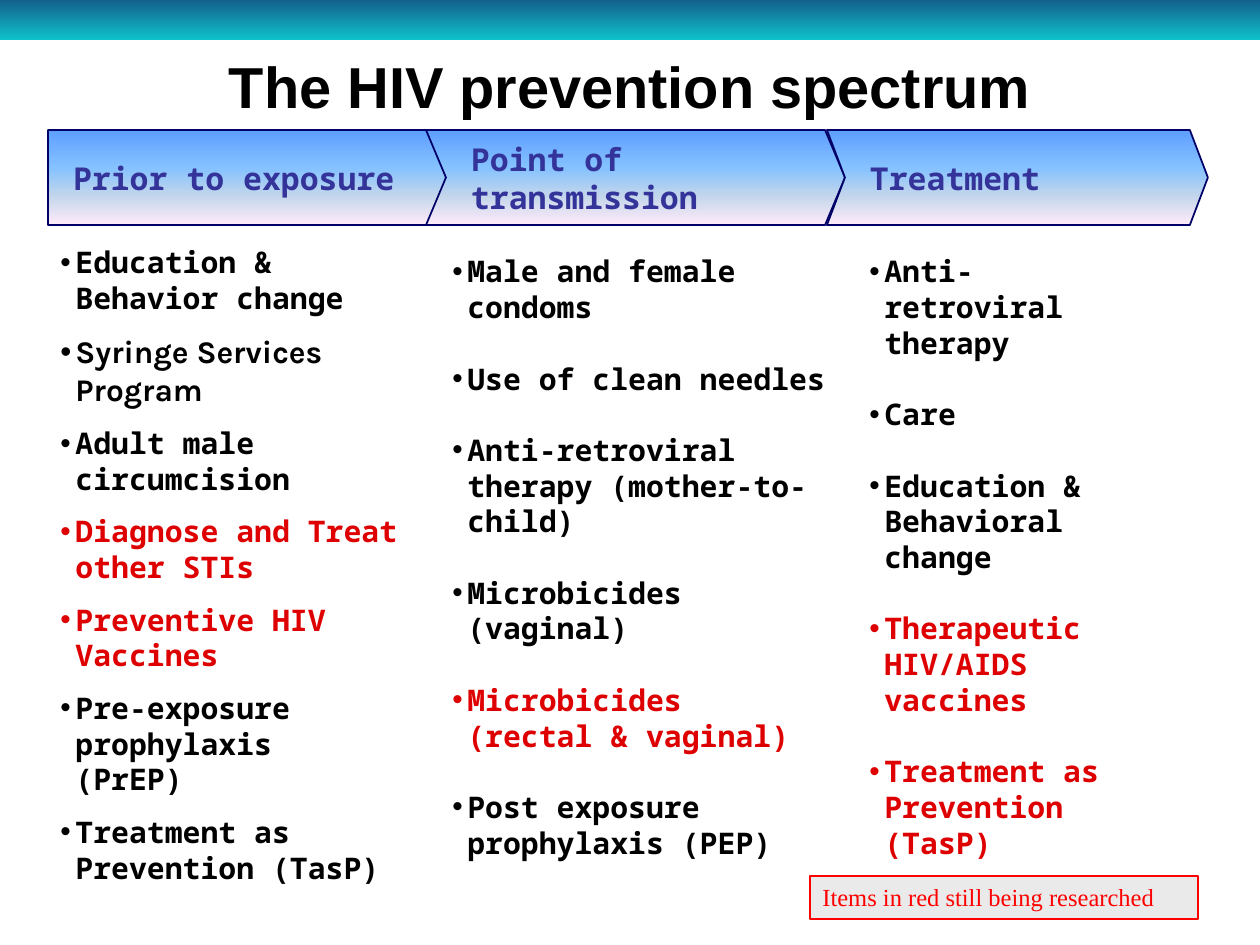
from dataclasses import dataclass

from lxml.etree import SubElement
from pptx import Presentation
from pptx.dml.color import RGBColor
from pptx.enum.shapes import MSO_SHAPE as Shape
from pptx.enum.text import MSO_ANCHOR as Anchor, PP_ALIGN as Align
from pptx.oxml.ns import qn
from pptx.util import Pt

PX = 914400 / 126
MONO = "Noto Sans Mono"
BLACK, RED = "000000", "DE0000"
STAGE_TOP, STAGE_HEIGHT = 130, 95
STAGE_STOPS = [(0, "5E9EFF"), (40, "85C2FF"), (70, "C4D6EB"), (100, "FFEBFA")]
BULLET_INDENT = 15


@dataclass
class Item:
    text: str
    color: str = BLACK
    font: str = MONO
    size: int = 17


@dataclass
class Stage:
    title: str
    outline: Shape
    left: int
    width: int
    point: float
    list_box: tuple[int, int, int, int]
    gap: float
    items: list[Item]


STAGES = [
    Stage("Prior to exposure", Shape.PENTAGON, 48, 399, 0.2, (48, 238, 373, 624), 9.6, [
        Item("Education & Behavior change"),
        Item("Syringe Services Program", font="Karla", size=18),
        Item("Adult male circumcision"),
        Item("Diagnose and Treat other STIs", RED),
        Item("Preventive HIV Vaccines", RED),
        Item("Pre-exposure prophylaxis\v(PrEP)"),
        Item("Treatment as Prevention (TasP)"),
    ]),
    Stage("Point of transmission", Shape.CHEVRON, 426, 426 - 7, 0.21, (440, 247, 403, 640), 20.4, [
        Item("Male and female condoms"),
        Item("Use of clean needles"),
        Item("Anti-retroviral therapy (mother-to-child)"),
        Item("Microbicides\v(vaginal)"),
        Item("Microbicides\v(rectal & vaginal)", RED),
        Item("Post exposure prophylaxis (PEP)"),
    ]),
    Stage("Treatment", Shape.CHEVRON, 827, 381, 0.19, (857, 247, 294, 518), 20.4, [
        Item("Anti-retroviral therapy"),
        Item("Care"),
        Item("Education & Behavioral change"),
        Item("Therapeutic HIV/AIDS vaccines", RED),
        Item("Treatment as Prevention (TasP)", RED),
    ]),
]


def px(length: float) -> int:
    return round(length * PX)


def rgb(color: str) -> RGBColor:
    return RGBColor.from_string(color)


def add_shape(slide, outline: Shape, box: tuple, line: str | None = None, line_width: float = 1):
    shape = slide.shapes.add_shape(outline, *map(px, box))
    shape.shadow.inherit = False
    if line:
        shape.line.color.rgb = rgb(line)
        shape.line.width = Pt(line_width)
    else:
        shape.line.fill.background()
    return shape


def fill_gradient(shape, stops: list[tuple[int, str]]) -> None:
    """Fill from top to bottom with any number of stops (percent, colour)."""
    shape.fill.gradient()
    shape.fill.gradient_angle = 270
    stop_list = shape._element.spPr.find(qn("a:gradFill")).find(qn("a:gsLst"))
    for stop in list(stop_list):
        stop_list.remove(stop)
    for percent, color in stops:
        stop = SubElement(stop_list, qn("a:gs"), pos=str(percent * 1000))
        SubElement(stop, qn("a:srgbClr"), val=color)


def write(paragraph, text: str, *, size: float, font: str = MONO, color: str = BLACK,
          bold: bool = True, align: Align = Align.LEFT) -> None:
    paragraph.text = text
    paragraph.alignment = align
    for run in paragraph.runs:
        run.font.size = Pt(size)
        run.font.name = font
        run.font.bold = bold
        run.font.color.rgb = rgb(color)


def add_bullet(paragraph) -> None:
    properties = paragraph._p.get_or_add_pPr()
    properties.set("marL", str(px(BULLET_INDENT)))
    properties.set("indent", str(-px(BULLET_INDENT)))
    SubElement(properties, qn("a:buFont"), typeface="Arial")
    SubElement(properties, qn("a:buChar"), char="•")


def add_text_frame(slide, box: tuple):
    frame = slide.shapes.add_textbox(*map(px, box)).text_frame
    frame.word_wrap = True
    return frame


def draw_stage(slide, stage: Stage) -> None:
    # Arrow heading
    box = (stage.left, STAGE_TOP, stage.width, STAGE_HEIGHT)
    arrow = add_shape(slide, stage.outline, box, line="000066")
    arrow.adjustments[0] = stage.point
    fill_gradient(arrow, STAGE_STOPS)
    arrow.text_frame.margin_left = px(25)
    arrow.text_frame.vertical_anchor = Anchor.MIDDLE
    write(arrow.text_frame.paragraphs[0], stage.title, size=18, color="333399")

    # Bulleted measures
    measures = add_text_frame(slide, stage.list_box)
    for index, item in enumerate(stage.items):
        paragraph = measures.add_paragraph() if index else measures.paragraphs[0]
        add_bullet(paragraph)
        if index:
            paragraph.space_before = Pt(stage.gap)
        write(paragraph, item.text, size=item.size, font=item.font, color=item.color)


def main() -> None:
    deck = Presentation()
    deck.slide_width, deck.slide_height = px(1260), px(945)
    slide = deck.slides.add_slide(deck.slide_layouts[6])

    # Top band
    band = add_shape(slide, Shape.RECTANGLE, (0, 0, 1260, 40))
    fill_gradient(band, [(0, "13608B"), (100, "0FC1CB")])

    # Title
    title = add_text_frame(slide, (87, 44, 1086, 92))
    title.vertical_anchor = Anchor.MIDDLE
    title.paragraphs[0].line_spacing = 0.9
    write(title.paragraphs[0], "The HIV prevention spectrum", size=33, font="Arial",
          align=Align.CENTER)

    # Stages of prevention
    for stage in STAGES:
        draw_stage(slide, stage)

    # Colour note
    note = add_shape(slide, Shape.RECTANGLE, (810, 876, 388, 43), line="FF0000", line_width=0.75)
    note.fill.solid()
    note.fill.fore_color.rgb = rgb("EAEAEA")
    note.text_frame.vertical_anchor = Anchor.TOP
    write(note.text_frame.paragraphs[0], "Items in red still being researched", size=14,
          font="Times New Roman", color="FF0000", bold=False)

    deck.save("out.pptx")


if __name__ == "__main__":
    main()
